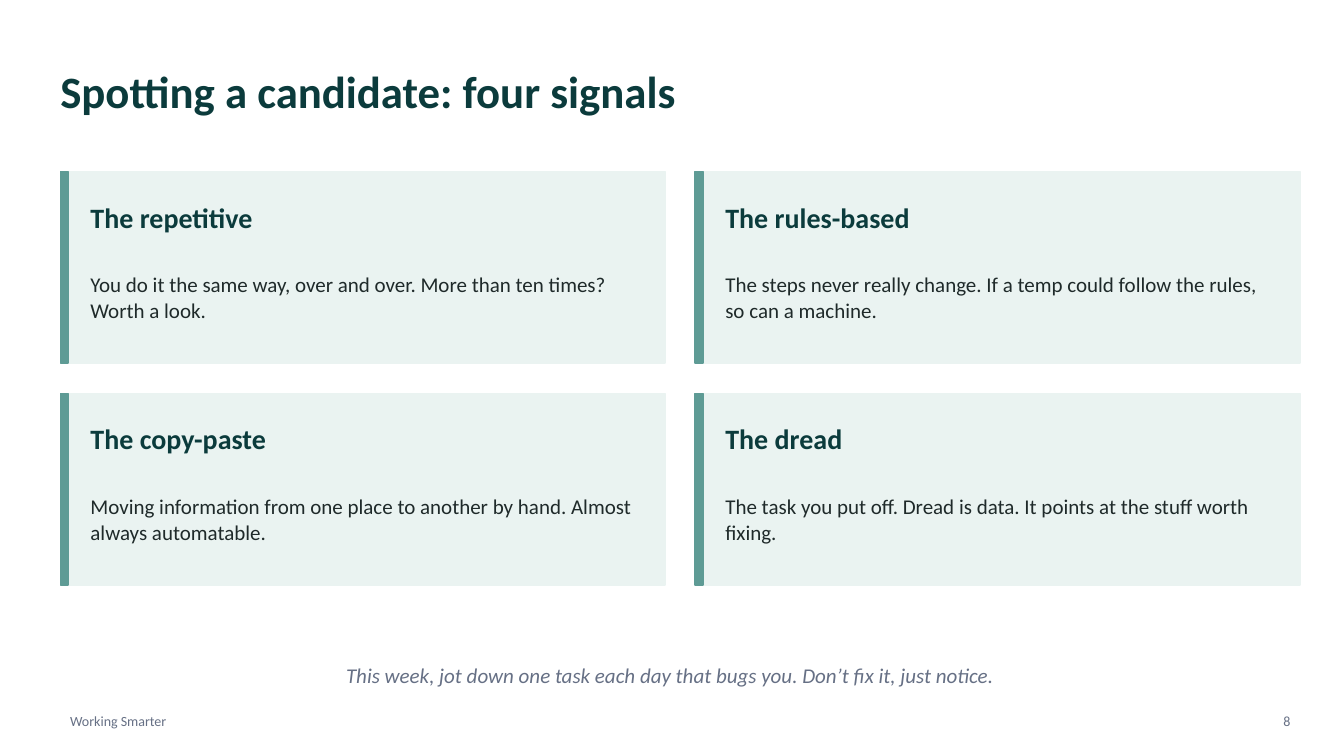
"""Build the slide on four signals that a task is worth automating."""
from pptx import Presentation
from pptx.dml.color import RGBColor
from pptx.enum.shapes import MSO_SHAPE
from pptx.enum.text import MSO_ANCHOR, PP_ALIGN
from pptx.util import Cm, Pt

RECTANGLE = MSO_SHAPE.RECTANGLE
MIDDLE = MSO_ANCHOR.MIDDLE
LEFT, CENTER, RIGHT = PP_ALIGN.LEFT, PP_ALIGN.CENTER, PP_ALIGN.RIGHT

TITLE = "Spotting a candidate: four signals"
SIGNALS = [
    ("The repetitive",
     "You do it the same way, over and over. More than ten times? Worth a look."),
    ("The rules-based",
     "The steps never really change. If a temp could follow the rules, so can a machine."),
    ("The copy-paste",
     "Moving information from one place to another by hand. Almost always automatable."),
    ("The dread",
     "The task you put off. Dread is data. It points at the stuff worth fixing."),
]
CLOSING = "This week, jot down one task each day that bugs you. Don’t fix it, just notice."
DECK_NAME = "Working Smarter"
PAGE_NUMBER = "8"

FONT = "Calibri"
DARK_TEAL, TEAL, PALE_TEAL = "0B3B3C", "5E9B95", "EAF3F1"
INK, GRAY, WHITE = "1F2A2A", "667085", "FFFFFF"

MARGIN, CONTENT_WIDTH = 1.52, 30.73
COLUMNS = 2
CARD_TOP, CARD_WIDTH, CARD_HEIGHT, CARD_GAP = 4.32, 15.24, 4.83, 0.76
ACCENT_WIDTH, CARD_INDENT, CARD_TEXT_WIDTH = 0.2, 0.76, 13.72
FOOTER_TOP, FOOTER_HEIGHT = 17.78, 0.76


def color(hex_code):
    return RGBColor.from_string(hex_code)


def add_block(slide, left, top, width, height, fill):
    block = slide.shapes.add_shape(RECTANGLE, Cm(left), Cm(top), Cm(width), Cm(height))
    block.shadow.inherit = False
    block.fill.solid()
    block.fill.fore_color.rgb = color(fill)
    block.line.color.rgb = color(fill)
    block.line.width = Pt(1)


def add_text(slide, words, left, top, width, height, size, ink,
             bold=False, italic=False, align=LEFT, inset=False):
    frame = slide.shapes.add_textbox(Cm(left), Cm(top), Cm(width), Cm(height)).text_frame
    frame.word_wrap = True
    frame.vertical_anchor = MIDDLE
    if not inset:
        frame.margin_left = frame.margin_right = 0
        frame.margin_top = frame.margin_bottom = 0
    paragraph = frame.paragraphs[0]
    paragraph.alignment = align
    run = paragraph.add_run()
    run.text = words
    run.font.name = FONT
    run.font.size = Pt(size)
    run.font.bold = bold
    run.font.italic = italic
    run.font.color.rgb = color(ink)


def add_card(slide, index, heading, detail):
    row, column = divmod(index, COLUMNS)
    left = MARGIN + column * (CARD_WIDTH + CARD_GAP)
    top = CARD_TOP + row * (CARD_HEIGHT + CARD_GAP)
    text_left = left + CARD_INDENT
    add_block(slide, left, top, CARD_WIDTH, CARD_HEIGHT, PALE_TEAL)
    add_block(slide, left, top, ACCENT_WIDTH, CARD_HEIGHT, TEAL)
    add_text(slide, heading, text_left, top + 0.51, CARD_TEXT_WIDTH, 1.27, 20, DARK_TEAL, bold=True)
    add_text(slide, detail, text_left, top + 1.9, CARD_TEXT_WIDTH, 2.54, 15, INK)


def main():
    deck = Presentation()
    deck.slide_width, deck.slide_height = Cm(33.87), Cm(19.05)
    slide = deck.slides.add_slide(deck.slide_layouts[6])
    slide.background.fill.solid()
    slide.background.fill.fore_color.rgb = color(WHITE)

    add_text(slide, TITLE, MARGIN, 1.14, CONTENT_WIDTH, 2.29, 32, DARK_TEAL, bold=True)
    for index, (heading, detail) in enumerate(SIGNALS):
        add_card(slide, index, heading, detail)
    add_text(slide, CLOSING, MARGIN, 16.38, CONTENT_WIDTH, 1.27, 15, GRAY,
             italic=True, align=CENTER)
    add_text(slide, DECK_NAME, MARGIN, FOOTER_TOP, 10.16, FOOTER_HEIGHT, 10, GRAY, inset=True)
    add_text(slide, PAGE_NUMBER, 31.5, FOOTER_TOP, 1.27, FOOTER_HEIGHT, 10, GRAY,
             align=RIGHT, inset=True)
    deck.save("out.pptx")


if __name__ == "__main__":
    main()
